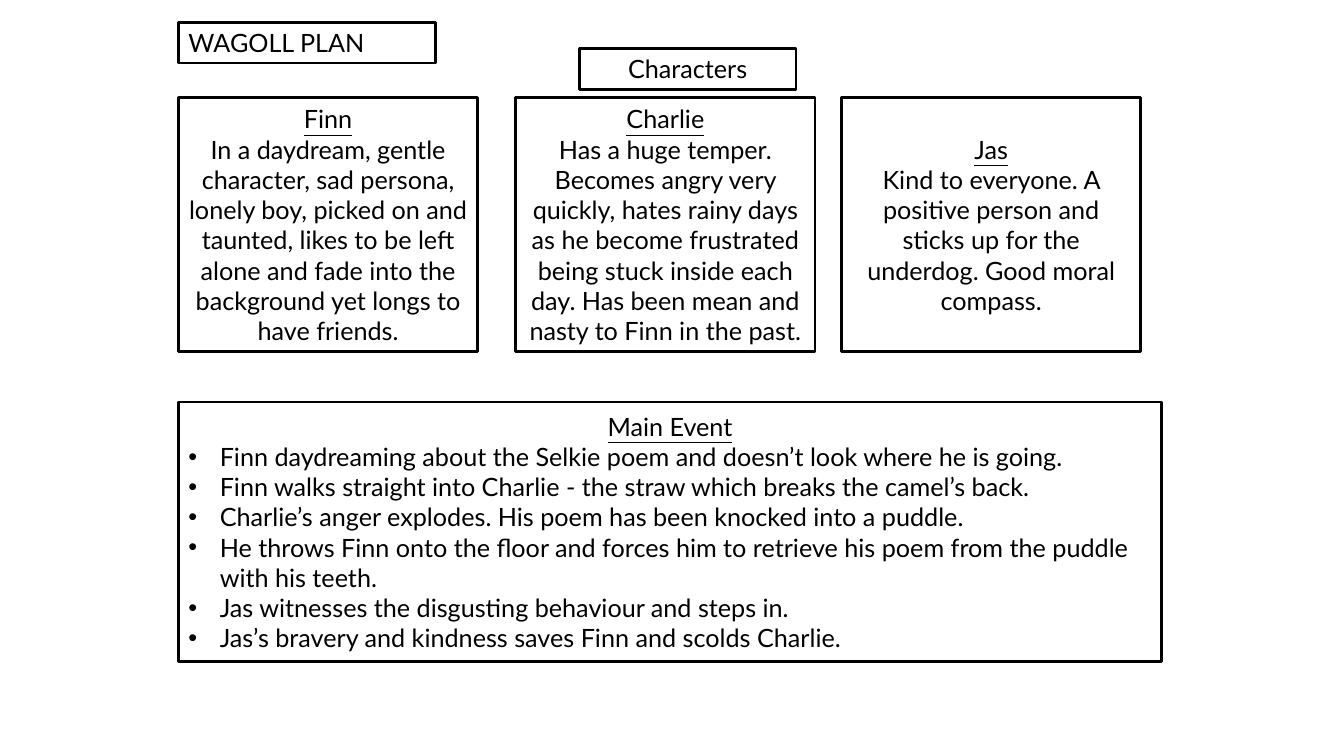
from lxml import etree
from pptx import Presentation
from pptx import util as u
from pptx.dml.color import RGBColor
from pptx.enum import shapes, text
from pptx.oxml.ns import qn

CHARACTERS = [
    (4.5, "Finn",
     "In a daydream, gentle character, sad persona, lonely boy, picked on and "
     "taunted, likes to be left alone and fade into the background yet longs "
     "to have friends."),
    (13, "Charlie",
     "Has a huge temper. Becomes angry very quickly, hates rainy days as he "
     "become frustrated being stuck inside each day. Has been mean and nasty "
     "to Finn in the past."),
    (21.21, "Jas",
     "Kind to everyone. A positive person and sticks up for the underdog. "
     "Good moral compass."),
]
EVENTS = [
    "Finn daydreaming about the Selkie poem and doesn’t look where he is going.",
    "Finn walks straight into Charlie - the straw which breaks the camel’s back.",
    "Charlie’s anger explodes. His poem has been knocked into a puddle.",
    "He throws Finn onto the floor and forces him to retrieve his poem from "
    "the puddle with his teeth.",
    "Jas witnesses the disgusting behaviour and steps in.",
    "Jas’s bravery and kindness saves Finn and scolds Charlie.",
]


def color(value):
    return RGBColor.from_string(value)


class StoryPlan:
    font, size, ink, paper = "Lato", 18, "000000", "FFFFFF"

    def __init__(self, slide):
        self.slide = slide

    def box(self, left, top, width, height, anchor=text.MSO_ANCHOR.MIDDLE):
        """Add an outlined box and return its empty text frame."""
        panel = self.slide.shapes.add_shape(
            shapes.MSO_SHAPE.RECTANGLE,
            u.Cm(left), u.Cm(top), u.Cm(width), u.Cm(height))
        panel.shadow.inherit = False
        panel.fill.solid()
        panel.fill.fore_color.rgb = color(self.paper)
        panel.line.color.rgb = color(self.ink)
        panel.line.width = u.Pt(2)
        frame = panel.text_frame
        frame.word_wrap = True
        frame.vertical_anchor = anchor
        return frame

    def add_text(self, frame, words, align=text.PP_ALIGN.CENTER,
                 underline=False, bullet=False):
        """Fill the first paragraph of the frame, or append one after it."""
        line = frame.paragraphs[0]
        if line.runs:
            line = frame.add_paragraph()
        line.alignment = align
        if bullet:
            self.bullet(line)
        run = line.add_run()
        run.text = words
        run.font.name = self.font
        run.font.size = u.Pt(self.size)
        run.font.underline = underline
        run.font.color.rgb = color(self.ink)

    def bullet(self, line):
        props = line._p.get_or_add_pPr()
        indent = u.Cm(0.79)
        props.set("marL", str(indent))
        props.set("indent", str(-indent))
        etree.SubElement(props, qn("a:buFont"), typeface="Arial")
        etree.SubElement(props, qn("a:buChar"), char="•")

    def label(self, left, top, width, words, align):
        frame = self.box(left, top, width, 1.03, text.MSO_ANCHOR.TOP)
        self.add_text(frame, words, align)

    def character(self, left, name, traits):
        frame = self.box(left, 2.46, 7.54, 6.4)
        self.add_text(frame, name, underline=True)
        self.add_text(frame, traits)

    def main_event(self, title, events):
        frame = self.box(4.5, 10.13, 24.77, 6.55)
        self.add_text(frame, title, underline=True)
        for event in events:
            self.add_text(frame, event, text.PP_ALIGN.LEFT, bullet=True)


def main():
    deck = Presentation()
    deck.slide_width, deck.slide_height = u.Cm(33.87), u.Cm(19.05)
    plan = StoryPlan(deck.slides.add_slide(deck.slide_layouts[6]))
    for character in CHARACTERS:
        plan.character(*character)
    plan.label(14.6, 1.22, 5.46, "Characters", text.PP_ALIGN.CENTER)
    plan.main_event("Main Event", EVENTS)
    plan.label(4.5, 0.56, 6.48, "WAGOLL PLAN", text.PP_ALIGN.LEFT)
    deck.save("out.pptx")


if __name__ == "__main__":
    main()
